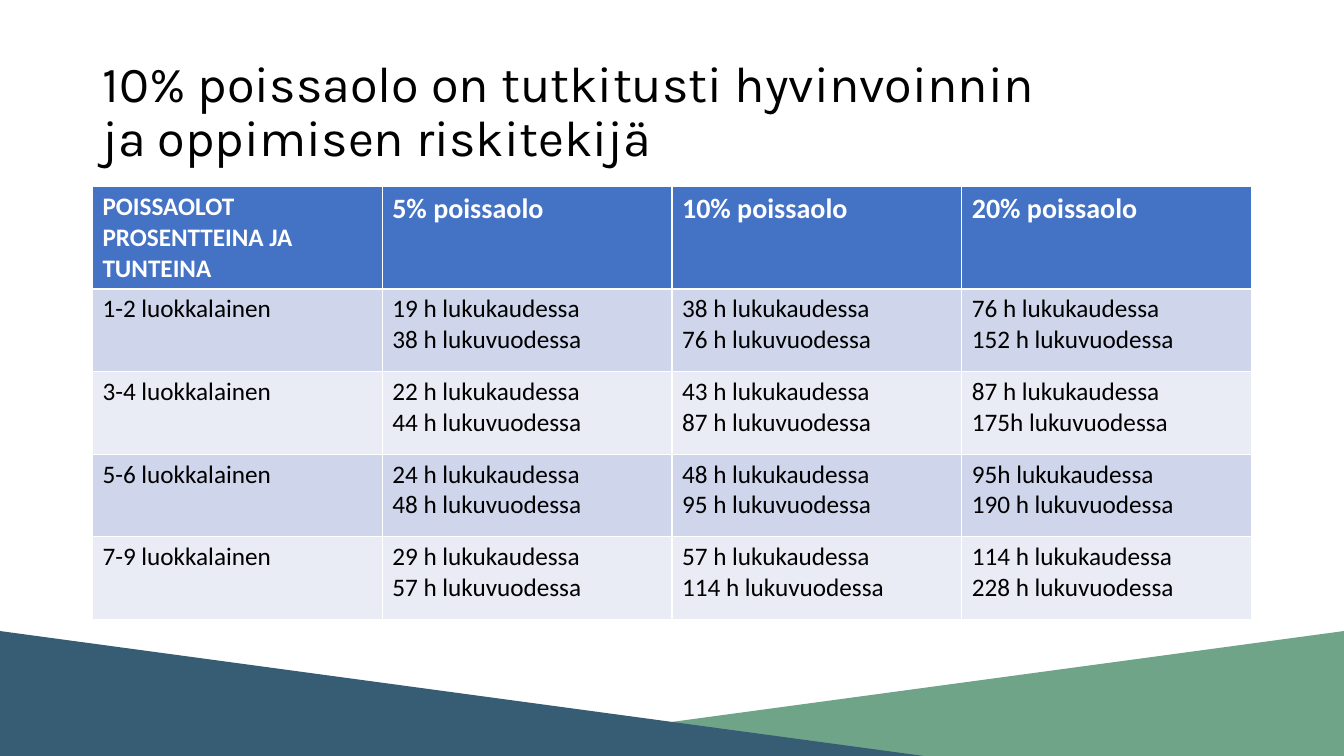
from pptx import Presentation
from pptx.dml.color import RGBColor as Rgb
from pptx.enum.shapes import MSO_SHAPE as Kind
from pptx.enum.text import MSO_ANCHOR as Anchor, MSO_AUTO_SIZE as Fit, PP_ALIGN as Align
from pptx.util import Inches, Pt

HUES = {"ink": "000000", "white": "FFFFFF", "head": "4472C4", "odd": "CFD5EA",
        "even": "E9EBF5", "green": "70A489", "blue": "365D73"}
TITLE = "10% poissaolo on tutkitusti hyvinvoinnin ja oppimisen riskitekijä"
HEADS = ["POISSAOLOT PROSENTTEINA JA TUNTEINA",
         "5% poissaolo", "10% poissaolo", "20% poissaolo"]
HOURS = {
    "1-2": [("19 h", "38 h"), ("38 h", "76 h"), ("76 h", "152 h")],
    "3-4": [("22 h", "44 h"), ("43 h", "87 h"), ("87 h", "175h")],
    "5-6": [("24 h", "48 h"), ("48 h", "95 h"), ("95h", "190 h")],
    "7-9": [("29 h", "57 h"), ("57 h", "114 h"), ("114 h", "228 h")],
}


class Deck:
    """Holds the style and the current slide; lengths are percent of its size."""

    def __init__(self):
        self.show = Presentation()
        self.show.slide_width = Inches(13.33)
        self.show.slide_height = Inches(7.5)
        self.slide = self.show.slides.add_slide(self.show.slide_layouts[5])

    def wide(self, share):
        return round(self.show.slide_width * share / 100)

    def high(self, share):
        return round(self.show.slide_height * share / 100)

    def box(self, x, y, w, h):
        return self.wide(x), self.high(y), self.wide(w), self.high(h)

    def style(self, para, face, size, hue, bold=False):
        font = para.font
        font.name, font.size, font.bold = face, Pt(size), bold
        font.color.rgb = Rgb.from_string(HUES[hue])

    def paint(self, item, hue):
        item.fill.solid()
        item.fill.fore_color.rgb = Rgb.from_string(HUES[hue])

    def title(self, text, *area):
        shape = self.slide.shapes.title
        shape.left, shape.top, shape.width, shape.height = self.box(*area)
        frame = shape.text_frame
        frame.text = text
        frame.word_wrap = True
        frame.auto_size = Fit.NONE
        frame.vertical_anchor = Anchor.MIDDLE
        para = frame.paragraphs[0]
        para.alignment = Align.LEFT
        para.line_spacing = 0.9
        self.style(para, "Karla", 36, "ink")

    def wedge(self, hue, *area, flip=False):
        shape = self.slide.shapes.add_shape(Kind.RIGHT_TRIANGLE, *self.box(*area))
        shape.shadow.inherit = False
        shape.line.fill.background()
        self.paint(shape, hue)
        if flip:
            shape._element.spPr.xfrm.set("flipH", "1")

    def cell(self, cell, text, fill, size, hue, bold):
        cell.text = text
        self.paint(cell, fill)
        for para in cell.text_frame.paragraphs:
            self.style(para, "Calibri", size, hue, bold)

    def table(self, rows, x, y, w, first, step):
        high = first + step * (len(rows) - 1)
        grid = self.slide.shapes.add_table(
            len(rows), len(rows[0]), *self.box(x, y, w, high)).table
        for r, row in enumerate(rows):
            grid.rows[r].height = self.high(step if r else first)
            for c, text in enumerate(row):
                if r:
                    look = "odd" if r % 2 else "even", 18, "ink", False
                else:
                    look = "head", 20 if c else 18, "white", True
                self.cell(grid.cell(r, c), text, *look)


def main():
    deck = Deck()
    deck.wedge("green", 31.25, 83.47, 68.75, 16.53, flip=True)
    deck.wedge("blue", 0, 83.47, 68.75, 16.53)
    deck.title(TITLE, 6.88, 5.33, 72.66, 19.33)
    body = [[f"{grade} luokkalainen"]
            + [f"{term} lukukaudessa\n{year} lukuvuodessa" for term, year in pairs]
            for grade, pairs in HOURS.items()]
    deck.table([HEADS] + body, 6.88, 24.67, 86.25, 13.4, 10.93)
    deck.show.save("out.pptx")


if __name__ == "__main__":
    main()
